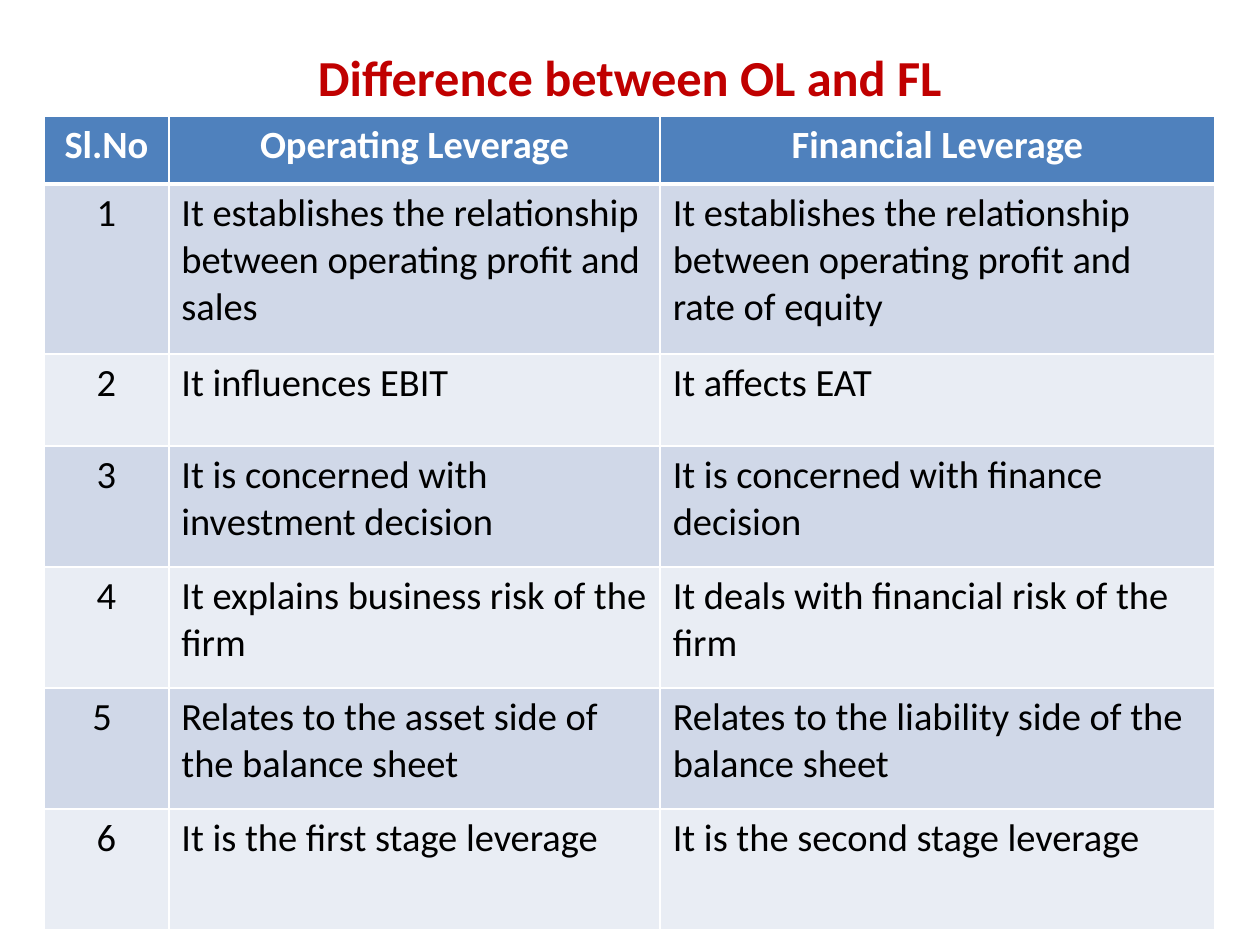
from lxml import etree
from pptx import Presentation
from pptx.dml.color import RGBColor
from pptx.enum.text import MSO_ANCHOR, PP_ALIGN
from pptx.oxml.ns import qn
from pptx.util import Inches, Pt

CENTER, LEFT = PP_ALIGN.CENTER, PP_ALIGN.LEFT
MIDDLE = MSO_ANCHOR.MIDDLE
FONT = "Calibri"
WHITE, BLACK, RED, BLUE = "FFFFFF", "000000", "C00000", "4F81BD"
BANDS = ["D0D8E8", "E9EDF4"]

COLS = [0.99, 3.9, 4.4]
ROWS = [0.54, 1.35, 0.73] + [0.96] * 4
CELLS = [
    ("Sl.No", "Operating Leverage", "Financial Leverage"),
    ("1", "It establishes the relationship between operating profit and sales",
     "It establishes the relationship between operating profit and rate of equity"),
    ("2", "It influences EBIT", "It affects EAT"),
    ("3", "It is concerned with investment decision",
     "It is concerned with finance decision"),
    ("4", "It explains business risk of the firm",
     "It deals with financial risk of the firm"),
    ("5 ", "Relates to the asset side of the balance sheet",
     "Relates to the liability side of the balance sheet"),
    ("6", "It is the first stage leverage", "It is the second stage leverage"),
]


def color(code):
    return RGBColor.from_string(code)


def write(frame, text, size, code, bold, align):
    para = frame.paragraphs[0]
    para.alignment = align
    run = para.add_run()
    run.text = text
    font = run.font
    font.name, font.size, font.bold = FONT, Pt(size), bold
    font.color.rgb = color(code)


def border(cell, top, bottom):
    props = cell._tc.get_or_add_tcPr()
    for side, width in (("L", 1), ("R", 1), ("T", top), ("B", bottom)):
        line = etree.SubElement(props, qn("a:ln" + side), w=str(Pt(width)))
        fill = etree.SubElement(line, qn("a:solidFill"))
        etree.SubElement(fill, qn("a:srgbClr"), val=WHITE)


def add_title(slide, left, top, width, height):
    title = slide.shapes.title
    title.left, title.top = Inches(left), Inches(top)
    title.width, title.height = Inches(width), Inches(height)
    title.text_frame.vertical_anchor = MIDDLE
    write(title.text_frame, "Difference between OL and FL", 28.8, RED, True, CENTER)


def add_grid(slide, left, top, width, height):
    table = slide.shapes.add_table(
        len(ROWS), len(COLS), Inches(left), Inches(top),
        Inches(width), Inches(height)).table
    for col, size in zip(table.columns, COLS):
        col.width = Inches(size)
    for r, (row, size) in enumerate(zip(table.rows, ROWS)):
        row.height = Inches(size)
        head = r == 0
        for c, text in enumerate(CELLS[r]):
            cell = table.cell(r, c)
            # Thick rule between the header and the body
            border(cell, 3 if r == 1 else 1, 3 if head else 1)
            cell.fill.solid()
            cell.fill.fore_color.rgb = color(BLUE if head else BANDS[(r - 1) % 2])
            write(cell.text_frame, text, 22, WHITE if head else BLACK, head,
                  CENTER if head or c == 0 else LEFT)


def main():
    deck = Presentation()
    deck.slide_width, deck.slide_height = Inches(10), Inches(7.5)
    slide = deck.slides.add_slide(deck.slide_layouts[5])
    add_title(slide, 0.5, 0.3, 9, 0.61)
    # Comparison table
    add_grid(slide, 0.35, 0.92, sum(COLS), sum(ROWS))
    deck.save("out.pptx")


if __name__ == "__main__":
    main()
